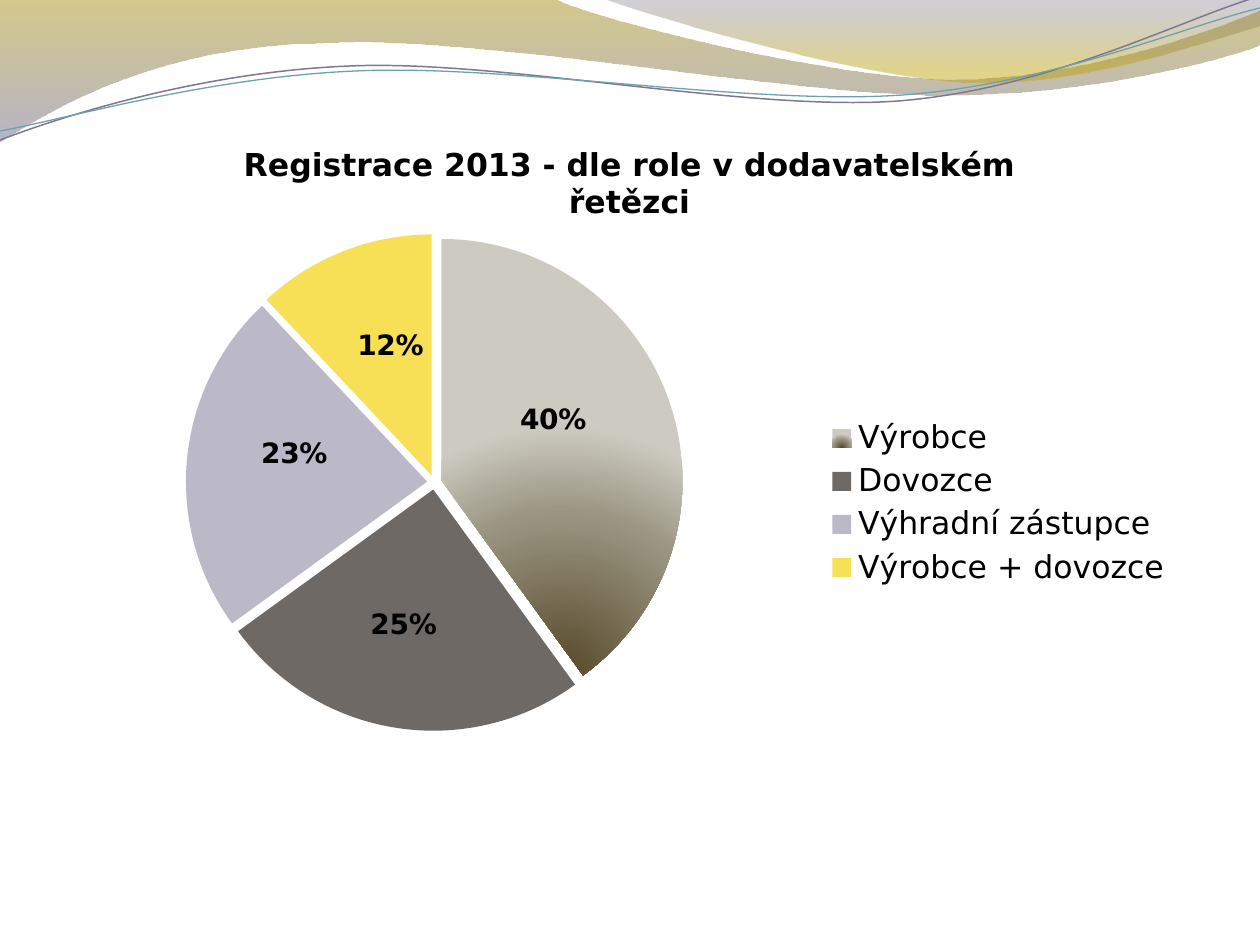
"""Build a slide with a pie chart of registrations by supply chain role."""
import lxml.etree
import pptx
import pptx.chart.data
import pptx.dml.color
import pptx.enum.chart
import pptx.oxml
import pptx.oxml.ns
import pptx.util

SCALE = 914400 / 126
FONT = "DejaVu Sans"
CHART_WIDTH, CHART_HEIGHT = 1111, 774
COLOURS = {
    "text": "000000", "olive": "9E8700", "violet": "7B769C",
    "slate": "66627C", "gold": "BDA100",
    "violet line": "7C7991", "blue line": "6EA0B0",
    "brown": "574828", "taupe": "9A9582", "stone": "CDCBC1",
    "grey": "6E6964", "lilac": "BBB8C8", "yellow": "F7DF56",
}
ROLES = {
    "Výrobce": (40, "stone", (-3, -23)),
    "Dovozce": (25, "grey", (-11, 17)),
    "Výhradní zástupce": (23, "lilac", (-13, -16)),
    "Výrobce + dovozce": (12, "yellow", (3, -17)),
}
LINEAR = '<a:lin ang="5400000" scaled="0"/>'
RADIAL = ('<a:path path="circle"><a:fillToRect l="50000" t="100000" '
          'r="50000" b="0"/></a:path>')
BANDS = [
    ([[(0, 0)], [(554, -1)],
      [(600, 21), (837, 79), (955, 79)],
      [(1075, 79), (1207, 33), (1260, 11)], [(1261, 45)],
      [(1239, 55), (1096, 96), (940, 95)],
      [(784, 95), (481, 35), (324, 43)],
      [(163, 45), (58, 105), (-1, 142)]],
     [(0, "olive", 45), (100, "violet", 55)]),
    ([[(604, -1)],
      [(641, 14), (859, 78), (969, 82)],
      [(1079, 87), (1211, 40), (1260, 26)], [(1260, 0)]],
     [(0, "slate", 30), (80, "gold", 45)]),
]
WAVES = [
    ([[(0, 140)],
      [(60, 117), (199, 72), (349, 66)],
      [(498, 59), (747, 112), (898, 101)],
      [(1050, 89), (1182, 19), (1257, -3)]], "violet line", 0.85),
    ([[(0, 131)],
      [(59, 121), (207, 77), (357, 71)],
      [(508, 64), (752, 106), (903, 95)],
      [(1053, 84), (1185, 26), (1260, 8)]], "blue line", 0.75),
]


def px(length):
    """Turn pixels into EMU."""
    return pptx.util.Emu(round(length * SCALE))


def colour(name):
    """Return a named colour."""
    return pptx.dml.color.RGBColor.from_string(COLOURS[name])


def style_font(font, size, bold=False):
    """Set the face, size, weight and colour of a font."""
    font.name = FONT
    font.size = pptx.util.Pt(size)
    font.bold = bold
    font.color.rgb = colour("text")


def set_gradient(properties, stops, direction):
    """Replace a solid fill by a gradient of (position, colour, opacity) stops."""
    stop_xml = "".join(
        f'<a:gs pos="{position * 1000}"><a:srgbClr val="{COLOURS[name]}">'
        f'<a:alpha val="{opacity * 1000}"/></a:srgbClr></a:gs>'
        for position, name, opacity in stops)
    gradient = pptx.oxml.parse_xml(
        f'<a:gradFill {pptx.oxml.ns.nsdecls("a")} rotWithShape="1">'
        f'<a:gsLst>{stop_xml}</a:gsLst>{direction}</a:gradFill>')
    properties.replace(
        properties.find(pptx.oxml.ns.qn("a:solidFill")), gradient)


def bend(shape, segments):
    """Join each run of three line ends into one Bezier curve."""
    lines = iter(list(shape._element.iter(pptx.oxml.ns.qn("a:lnTo"))))
    for segment in segments[1:]:
        ends = [next(lines) for _ in segment]
        if len(ends) == 3:
            curve = lxml.etree.Element(pptx.oxml.ns.qn("a:cubicBezTo"))
            ends[0].addprevious(curve)
            for end in ends:
                curve.append(end[0])
                end.getparent().remove(end)


def add_outline(slide, segments, close):
    """Add a freeform of straight and curved segments."""
    points = [(px(x), px(y)) for segment in segments for x, y in segment]
    builder = slide.shapes.build_freeform(*points[0], scale=1.0)
    builder.add_line_segments(points[1:], close=close)
    shape = builder.convert_to_shape()
    bend(shape, segments)
    shape.shadow.inherit = False
    return shape


def add_band(slide, segments, stops):
    """Add a closed band with a vertical gradient."""
    shape = add_outline(slide, segments, True)
    shape.line.fill.background()
    shape.fill.solid()
    set_gradient(shape._element.spPr, stops, LINEAR)


def add_wave(slide, segments, name, width):
    """Add an open curved line."""
    shape = add_outline(slide, segments, False)
    shape.fill.background()
    shape.line.color.rgb = colour(name)
    shape.line.width = pptx.util.Pt(width)


def make_layout(settings, **lengths):
    """Return a manual chart layout with lengths given in pixels."""
    totals = {"x": CHART_WIDTH, "w": CHART_WIDTH,
              "y": CHART_HEIGHT, "h": CHART_HEIGHT}
    values = "".join(f'<c:{key} val="{length / totals[key]:.4f}"/>'
                     for key, length in lengths.items())
    return pptx.oxml.parse_xml(
        f'<c:layout {pptx.oxml.ns.nsdecls("c")}><c:manualLayout>'
        f'{settings}{values}</c:manualLayout></c:layout>')


def place_plot(chart):
    """Fix the inner plot area."""
    plot_area = chart._chartSpace.chart.plotArea
    for old_layout in plot_area.findall(pptx.oxml.ns.qn("c:layout")):
        plot_area.remove(old_layout)
    settings = ('<c:layoutTarget val="inner"/><c:xMode val="edge"/>'
                '<c:yMode val="edge"/>')
    plot_area.insert(0, make_layout(settings, x=112, y=118, w=497, h=497))


def label_slice(point, offset):
    """Show the percentage of a slice, moved from its centre."""
    label = point.data_label
    style_font(label.font, 16, True)
    label.position = pptx.enum.chart.XL_LABEL_POSITION.CENTER
    element = label._dLbl
    element.find(pptx.oxml.ns.qn("c:showVal")).set("val", "0")
    element.find(pptx.oxml.ns.qn("c:showPercent")).set("val", "1")
    element.find(pptx.oxml.ns.qn("c:idx")).addnext(
        make_layout("", x=offset[0], y=offset[1]))


def style_slices(series):
    """Pull the slices apart, colour and label them."""
    explosion = lxml.etree.Element(pptx.oxml.ns.qn("c:explosion"), val="3")
    series._element.get_or_add_spPr().addnext(explosion)
    series.data_labels.show_percentage = True
    series.data_labels.show_value = False
    for index, (_, name, offset) in enumerate(ROLES.values()):
        point = series.points[index]
        point.format.fill.solid()
        point.format.fill.fore_color.rgb = colour(name)
        point.format.line.fill.background()
        label_slice(point, offset)
    first_slice = series._element.find(
        f'{pptx.oxml.ns.qn("c:dPt")}/{pptx.oxml.ns.qn("c:spPr")}')
    set_gradient(
        first_slice,
        [(0, "brown", 100), (65, "taupe", 100), (100, "stone", 100)], RADIAL)


def add_pie(slide):
    """Add the pie chart with its title, legend and percentages."""
    data = pptx.chart.data.CategoryChartData()
    data.categories = list(ROLES)
    data.add_series("Series 1", [role[0] for role in ROLES.values()])
    chart = slide.shapes.add_chart(
        pptx.enum.chart.XL_CHART_TYPE.PIE,
        px(74), px(116), px(CHART_WIDTH), px(CHART_HEIGHT), data).chart
    style_font(chart.font, 10)
    chart.has_title = True
    run = chart.chart_title.text_frame.paragraphs[0].add_run()
    run.text = "Registrace 2013 - dle role v dodavatelském řetězci"
    style_font(run.font, 18, True)
    chart.chart_title.include_in_layout = False
    chart.has_legend = True
    chart.legend.position = pptx.enum.chart.XL_LEGEND_POSITION.RIGHT
    chart.legend.include_in_layout = False
    style_font(chart.legend.font, 18)
    chart.plots[0].vary_by_categories = True
    style_slices(chart.plots[0].series[0])
    place_plot(chart)


def main():
    """Build and save the presentation."""
    presentation = pptx.Presentation()
    presentation.slide_width = px(1260)
    presentation.slide_height = px(945)
    slide = presentation.slides.add_slide(presentation.slide_layouts[6])
    for band in BANDS:
        add_band(slide, *band)
    for wave in WAVES:
        add_wave(slide, *wave)
    add_pie(slide)
    presentation.save("out.pptx")


if __name__ == "__main__":
    main()
